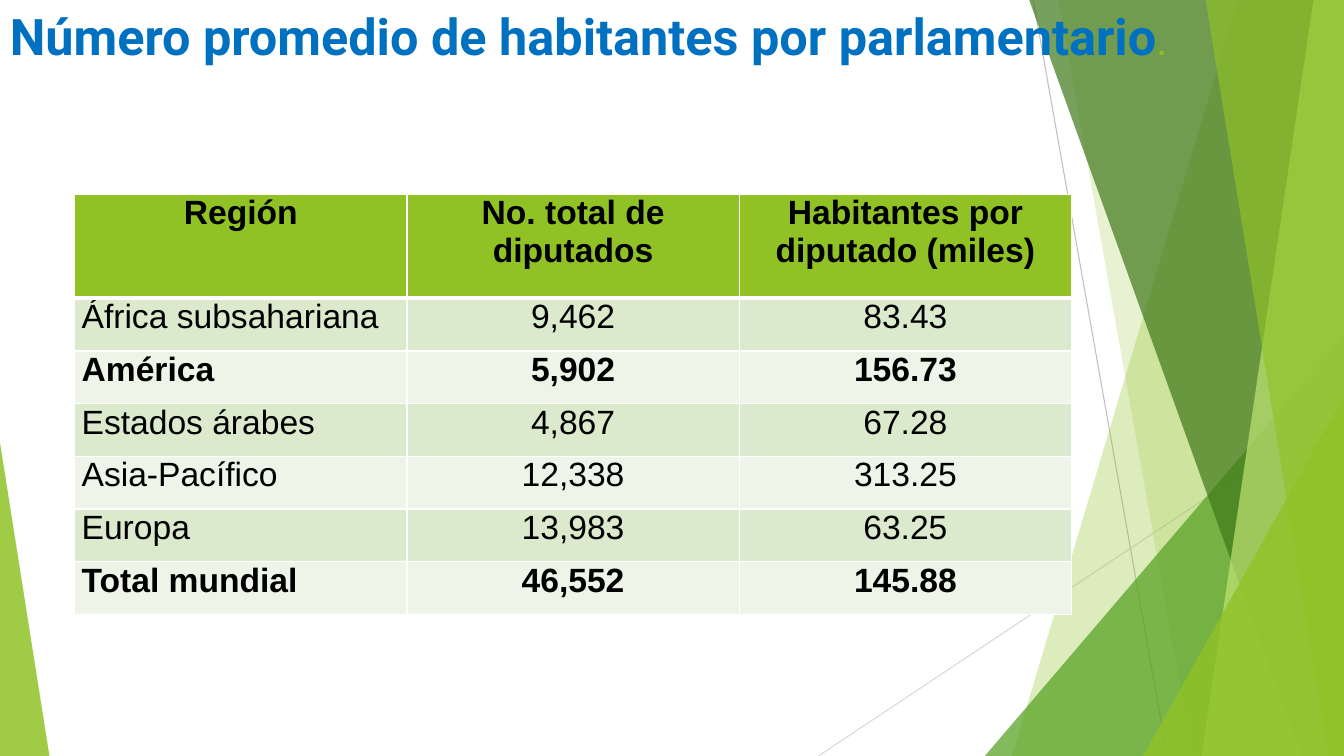
"""Build the slide on the average number of inhabitants per member of parliament."""
from dataclasses import dataclass

from lxml import etree
from pptx import Presentation
from pptx.dml.color import RGBColor
from pptx.enum.shapes import MSO_CONNECTOR, MSO_SHAPE
from pptx.enum.text import MSO_ANCHOR, PP_ALIGN
from pptx.oxml.ns import qn
from pptx.util import Inches, Pt

STRAIGHT = MSO_CONNECTOR.STRAIGHT
TRIANGLE = MSO_SHAPE.ISOSCELES_TRIANGLE
TOP = MSO_ANCHOR.TOP
LEFT, CENTER = PP_ALIGN.LEFT, PP_ALIGN.CENTER
WIDTH, HEIGHT = Inches(13.33), Inches(7.5)


@dataclass(frozen=True)
class Theme:
    """Colours, fonts and type sizes of the slide."""
    lime: str = "90C226"
    green: str = "54A021"
    forest: str = "3F7819"
    pale: str = "C0E474"
    blue: str = "0070C0"
    black: str = "000000"
    white: str = "FFFFFF"
    bands: tuple = ("DBE9CD", "EEF4E8")
    title_font: str = "Roboto"
    stop_font: str = "Cabin"
    table_font: str = "Arial"
    title_size: float = 36
    stop_size: float = 32.4
    table_size: float = 24
    hairline: float = 0.75
    rule: float = 1
    head_rule: float = 3


THEME = Theme()

LINES = [
    ((76.88, 0), (86.85, 100), "BFBFBF"),
    ((100, 53.73), (60.9, 100), "D9D9D9"),
]
BACK_VEILS = [(92.1, 75.3, THEME.lime, 30), (78.75, 88.73, THEME.lime, 20)]
FRONT_VEILS = [
    (76.58, 96.83, THEME.forest, 70),
    (97.73, 89.4, THEME.pale, 70),
    (89.7, 98.85, THEME.lime, 65),
]
GREEN_CORNER = (73.28, 44.4, 26.72, 1, THEME.green, 72)
FRONT_CORNERS = [
    (85.05, 52.4, 14.95, 1, THEME.lime, 80),
    (0, 58.53, 3.68, 0, THEME.lime, 85),
]

TITLE = "Número promedio de habitantes por parlamentario"
HEADINGS = ("Región", "No. total de diputados", "Habitantes por diputado (miles)")
REGIONS = [
    ("África subsahariana", "9,462", "83.43"),
    ("América", "5,902", "156.73"),
    ("Estados árabes", "4,867", "67.28"),
    ("Asia-Pacífico", "12,338", "313.25"),
    ("Europa", "13,983", "63.25"),
    ("Total mundial", "46,552", "145.88"),
]
BOLD_REGIONS = {"América", "Total mundial"}
TABLE_BOX = (5.55, 25.73, 74.18, 55.6)
HEAD_ROW, BODY_ROW = 13.73, 6.97


def across(percent):
    """Return a share of the slide's width."""
    return round(WIDTH * percent / 100)


def down(percent):
    """Return a share of the slide's height."""
    return round(HEIGHT * percent / 100)


def apply(obj, values):
    """Set attributes from a dict of values."""
    for name, value in values.items():
        setattr(obj, name, value)


def paint(sp, color, opacity):
    """Give a shape a translucent fill, no line and no shadow."""
    sp.shadow.inherit = False
    sp.fill.solid()
    sp.fill.fore_color.rgb = RGBColor.from_string(color)
    tint = sp.fill._xPr.find(qn("a:solidFill"))[0]
    etree.SubElement(tint, qn("a:alpha"), val=str(opacity * 1000))
    sp.line.fill.background()


def add_line(s, start, end, color):
    """Draw a thin straight line."""
    sp = s.shapes.add_connector(
        STRAIGHT, across(start[0]), down(start[1]), across(end[0]), down(end[1]))
    sp.line.color.rgb = RGBColor.from_string(color)
    sp.line.width = Pt(THEME.hairline)
    etree.SubElement(sp._element.spPr, qn("a:effectLst"))


def add_veil(s, top, bottom, color, opacity):
    """Draw a full-height facet from a slanted left edge to the right edge."""
    builder = s.shapes.build_freeform(across(top), 0)
    builder.add_line_segments(
        [(WIDTH, 0), (WIDTH, HEIGHT), (across(bottom), HEIGHT)], close=True)
    paint(builder.convert_to_shape(), color, opacity)


def add_corner(s, left, top, width, apex, color, opacity):
    """Draw a right triangle standing on the bottom edge."""
    sp = s.shapes.add_shape(
        TRIANGLE, across(left), down(top), across(width), down(100 - top))
    sp.adjustments[0] = apex
    paint(sp, color, opacity)


def add_run(p, text, font, size, color, bold):
    """Append a formatted run to a paragraph."""
    r = p.add_run()
    r.text = text
    apply(r.font, {"name": font, "size": Pt(size), "bold": bold})
    r.font.color.rgb = RGBColor.from_string(color)


def add_title(s):
    """Write the title across the top of the slide."""
    tf = s.shapes.add_textbox(0, 0, WIDTH, down(16.5)).text_frame
    apply(tf, {"word_wrap": True, "vertical_anchor": TOP})
    p = tf.paragraphs[0]
    add_run(p, TITLE, THEME.title_font, THEME.title_size, THEME.blue, True)
    add_run(p, ".", THEME.stop_font, THEME.stop_size, THEME.lime, False)


def add_borders(cell, top, bottom):
    """Give a cell white borders."""
    widths = {"a:lnL": THEME.rule, "a:lnR": THEME.rule, "a:lnT": top, "a:lnB": bottom}
    tc_pr = cell._tc.get_or_add_tcPr()
    for tag, width in widths.items():
        ln = etree.SubElement(tc_pr, qn(tag), w=str(Pt(width)))
        fill = etree.SubElement(ln, qn("a:solidFill"))
        etree.SubElement(fill, qn("a:srgbClr"), val=THEME.white)


def fill_cell(cell, text, align, bold, color, top, bottom):
    """Write, border and fill one table cell."""
    apply(cell, {"margin_left": Inches(0.07), "margin_right": Inches(0.07),
                 "margin_top": 0, "margin_bottom": 0, "vertical_anchor": TOP})
    p = cell.text_frame.paragraphs[0]
    p.alignment = align
    add_run(p, text, THEME.table_font, THEME.table_size, THEME.black, bold)
    add_borders(cell, top, bottom)
    cell.fill.solid()
    cell.fill.fore_color.rgb = RGBColor.from_string(color)


def add_region_table(s):
    """Build the table of regions."""
    left, top, width, height = TABLE_BOX
    table = s.shapes.add_table(
        len(REGIONS) + 1, len(HEADINGS),
        across(left), down(top), across(width), down(height)).table
    apply(table, {"first_row": True, "horz_banding": False})
    for i, row in enumerate([HEADINGS, *REGIONS]):
        head = i == 0
        table.rows[i].height = down(HEAD_ROW if head else BODY_ROW)
        color = THEME.lime if head else THEME.bands[(i - 1) % 2]
        bold = head or row[0] in BOLD_REGIONS
        above = THEME.head_rule if i == 1 else THEME.rule
        below = THEME.head_rule if head else THEME.rule
        for j, text in enumerate(row):
            align = CENTER if head or j else LEFT
            fill_cell(table.cell(i, j), text, align, bold, color, above, below)


def main():
    """Build and save the slide."""
    prs = Presentation()
    apply(prs, {"slide_width": WIDTH, "slide_height": HEIGHT})
    s = prs.slides.add_slide(prs.slide_layouts[6])
    for line in LINES:
        add_line(s, *line)
    for veil in BACK_VEILS:
        add_veil(s, *veil)
    add_corner(s, *GREEN_CORNER)
    for veil in FRONT_VEILS:
        add_veil(s, *veil)
    for corner in FRONT_CORNERS:
        add_corner(s, *corner)
    add_title(s)
    add_region_table(s)
    prs.save("out.pptx")


if __name__ == "__main__":
    main()
